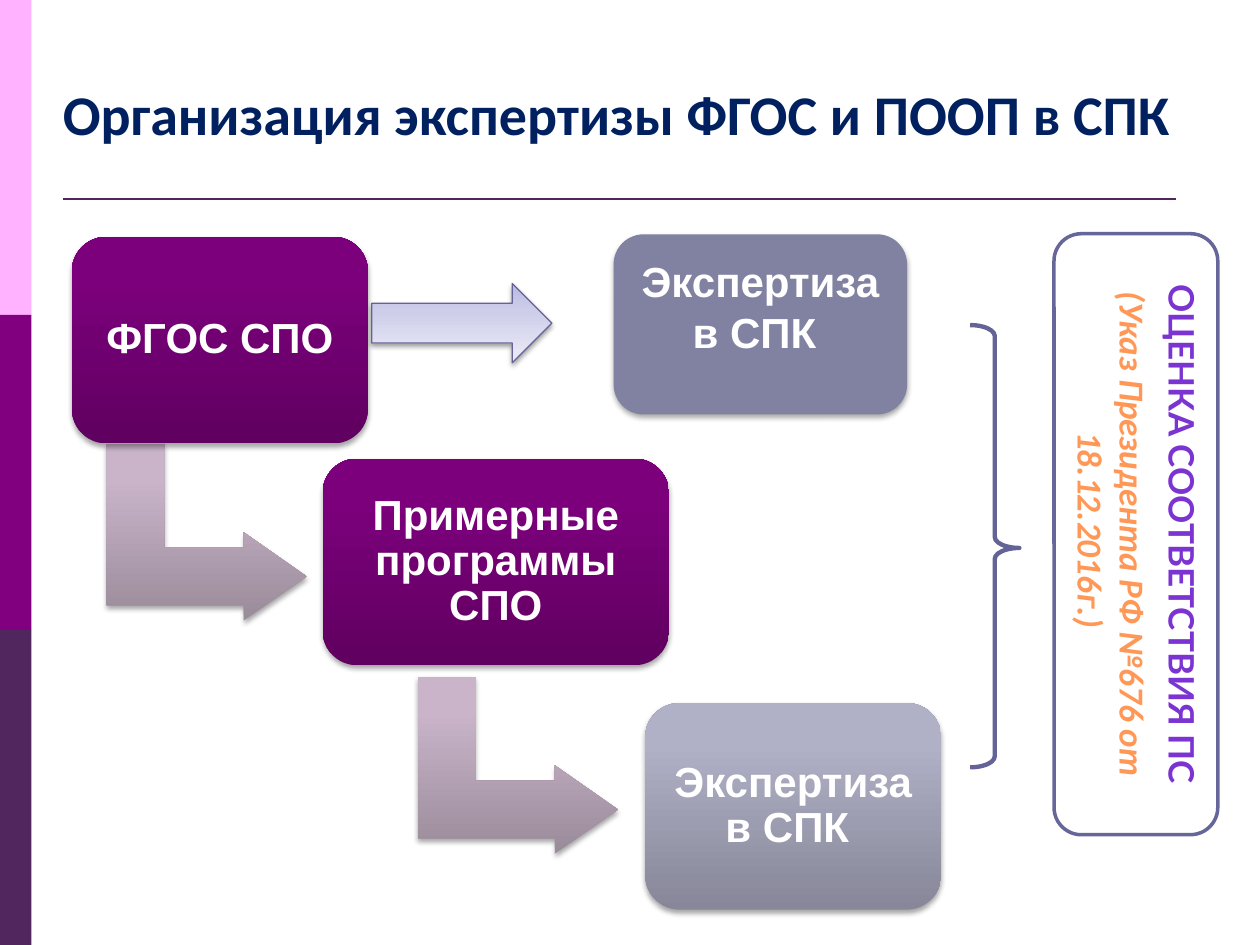
"""Build the slide on expert review of education standards."""
from lxml import etree
from pptx import Presentation
from pptx.dml.color import RGBColor
from pptx.enum.shapes import MSO_CONNECTOR, MSO_SHAPE
from pptx.enum.text import MSO_ANCHOR, PP_ALIGN
from pptx.oxml import parse_xml
from pptx.oxml.ns import nsdecls, qn
from pptx.util import Inches, Pt

RECT, ROUND = MSO_SHAPE.RECTANGLE, MSO_SHAPE.ROUNDED_RECTANGLE
BENT, ARROW, BRACE = MSO_SHAPE.BENT_UP_ARROW, MSO_SHAPE.LEFT_ARROW, MSO_SHAPE.RIGHT_BRACE
TOP, MIDDLE, BOTTOM = MSO_ANCHOR.TOP, MSO_ANCHOR.MIDDLE, MSO_ANCHOR.BOTTOM
LEFT, CENTER = PP_ALIGN.LEFT, PP_ALIGN.CENTER

WHITE = RGBColor(0xFF, 0xFF, 0xFF)
NAVY = RGBColor(0x00, 0x20, 0x60)
PLUM = RGBColor(0x51, 0x25, 0x5D)
PINK = RGBColor(0xFE, 0xB2, 0xFF)
PURPLE = RGBColor(0x80, 0x00, 0x80)
SLATE = RGBColor(0x81, 0x81, 0xA1)
INDIGO = RGBColor(0x63, 0x63, 0x97)
FRAME = RGBColor(0x66, 0x66, 0x99)
VIOLET = RGBColor(0x7B, 0x34, 0xD2)
ORANGE = RGBColor(0xFF, 0x98, 0x56)

PURPLE_FADE = [(0, "600060"), (80, "7C007C"), (100, "7D007D")]
GREY_FADE = [(0, "878799"), (80, "B0B0C6"), (100, "B0B0C8")]
MAUVE_FADE = [(0, "9A8B9A"), (80, "C9B4C9"), (100, "CAB5CA")]
LILAC_FADE = [(0, "B9B9E2"), (35, "CECEEA"), (100, "ECECF7")]

TITLE = "Организация экспертизы ФГОС и ПООП в СПК"
SIDE_BANDS = [PINK, PURPLE, PLUM]
BENT_ARROWS = [(0.94, 3.43), (3.41, 5.28)]
STEPS = [
    ("ФГОС СПО", (0.57, 1.88, 2.35, 1.64), PURPLE_FADE, 0.9, 0.1),
    ("Примерные программы СПО", (2.56, 3.64, 2.75, 1.64), PURPLE_FADE, 0.9, 0.1),
    ("Экспертиза в СПК ", (5.12, 5.58, 2.35, 1.64), GREY_FADE, 0.9, 0.1),
    ("Экспертиза в СПК ", (4.87, 1.86, 2.33, 1.43), SLATE, 1.0, 0.39),
]
ASSESSMENT = [
    ("ОЦЕНКА СООТВЕТСТВИЯ ПС", "Lato", VIOLET, False),
    ("(Указ Президента РФ №676 от 18.12.2016г.) ", "Calibri", ORANGE, True),
]


def fade(shape, stops, turns):
    """Fill a shape with an upward gradient."""
    marks = "".join(f'<a:gs pos="{pos * 1000}"><a:srgbClr val="{color}"/></a:gs>'
                    for pos, color in stops)
    gradient = parse_xml(f'<a:gradFill {nsdecls("a")} rotWithShape="{int(turns)}">'
                         f'<a:gsLst>{marks}</a:gsLst>'
                         '<a:lin ang="16200000" scaled="0"/></a:gradFill>')
    shape._element.spPr.find(qn("a:prstGeom")).addnext(gradient)


def cast_shadow(shape, alpha, distance):
    """Add a soft shadow below a shape."""
    effects = shape._element.spPr.find(qn("a:effectLst"))
    effects.append(parse_xml(
        f'<a:outerShdw {nsdecls("a")} blurRad="{Pt(3.1)}" dist="{Pt(distance)}" '
        'dir="5400000" rotWithShape="0"><a:srgbClr val="000000">'
        f'<a:alpha val="{alpha * 1000}"/></a:srgbClr></a:outerShdw>'))


def add_figure(page, kind, place, fill=None, line=None, rotation=0, adjust=(), turns=True):
    """Add a preset shape with its fill and line."""
    shape = page.shapes.add_shape(kind, *map(Inches, place))
    shape.rotation = rotation
    shape.shadow.inherit = False
    for index, value in enumerate(adjust):
        shape.adjustments[index] = value
    if line:
        shape.line.color.rgb, shape.line.width = line[0], Pt(line[1])
    else:
        shape.line.fill.background()
    if isinstance(fill, list):
        fade(shape, fill, turns)
    elif fill is not None:
        shape.fill.solid()
        shape.fill.fore_color.rgb = fill
    else:
        shape.fill.background()
    return shape


def set_frame(shape, anchor, insets=(0.1, 0.05, 0.1, 0.05)):
    """Set wrapping, anchor and insets of a text frame."""
    frame = shape.text_frame
    frame.word_wrap = True
    frame.vertical_anchor = anchor
    (frame.margin_left, frame.margin_top,
     frame.margin_right, frame.margin_bottom) = map(Inches, insets)
    return frame


def write(para, text, size, font, color, align=CENTER, italic=False):
    """Write one bold run into a paragraph."""
    para.alignment = align
    span = para.add_run()
    span.text = text
    span.font.size, span.font.name = Pt(size), font
    span.font.bold, span.font.italic = True, italic
    span.font.color.rgb = color


def main():
    """Build and save the deck."""
    deck = Presentation()
    deck.slide_width, deck.slide_height = Inches(10), Inches(7.5)
    page = deck.slides.add_slide(deck.slide_layouts[6])

    for row, color in enumerate(SIDE_BANDS):
        add_figure(page, RECT, (0, 2.5 * row, 0.25, 2.5), color)
    rule = page.shapes.add_connector(MSO_CONNECTOR.STRAIGHT, Inches(0.5), Inches(1.58),
                                     Inches(9.33), Inches(1.58))
    rule.line.color.rgb, rule.line.width = PLUM, Pt(1.5)
    etree.SubElement(rule._element.spPr, qn("a:effectLst"))

    title = page.shapes.add_textbox(*map(Inches, (0.4, 0.6, 9.26, 0.61)))
    write(set_frame(title, BOTTOM).paragraphs[0], TITLE, 32, "Calibri", NAVY, LEFT)

    for left, top in BENT_ARROWS:
        bent = add_figure(page, BENT, (left, top, 1.4, 1.59), MAUVE_FADE, rotation=90,
                          adjust=(0.328, 0.25, 0.358), turns=False)
        cast_shadow(bent, 35, 1.8)

    for text, place, fill, spacing, bottom in STEPS:
        step = add_figure(page, ROUND, place, fill)
        cast_shadow(step, 35, 1.8)
        para = set_frame(step, MIDDLE, (0.1, 0.1, 0.1, bottom)).paragraphs[0]
        para.line_spacing = spacing
        write(para, text, 24, "Arial", WHITE)

    arrow = add_figure(page, ARROW, (2.95, 2.25, 1.43, 0.63), LILAC_FADE, (INDIGO, 0.75), 180)
    cast_shadow(arrow, 38, 1.6)
    add_figure(page, BRACE, (7.7, 2.58, 0.39, 3.51), line=(INDIGO, 2.5), adjust=(0.224, 0.504))

    panel = add_figure(page, ROUND, (6.63, 3.59, 4.77, 1.3), WHITE, (FRAME, 2), 90)
    frame = set_frame(panel, TOP)
    for index, (text, font, color, italic) in enumerate(ASSESSMENT):
        para = frame.add_paragraph() if index else frame.paragraphs[0]
        para.space_before = Pt(4)
        write(para, text, 20, font, color, italic=italic)

    deck.save("out.pptx")


if __name__ == "__main__":
    main()
